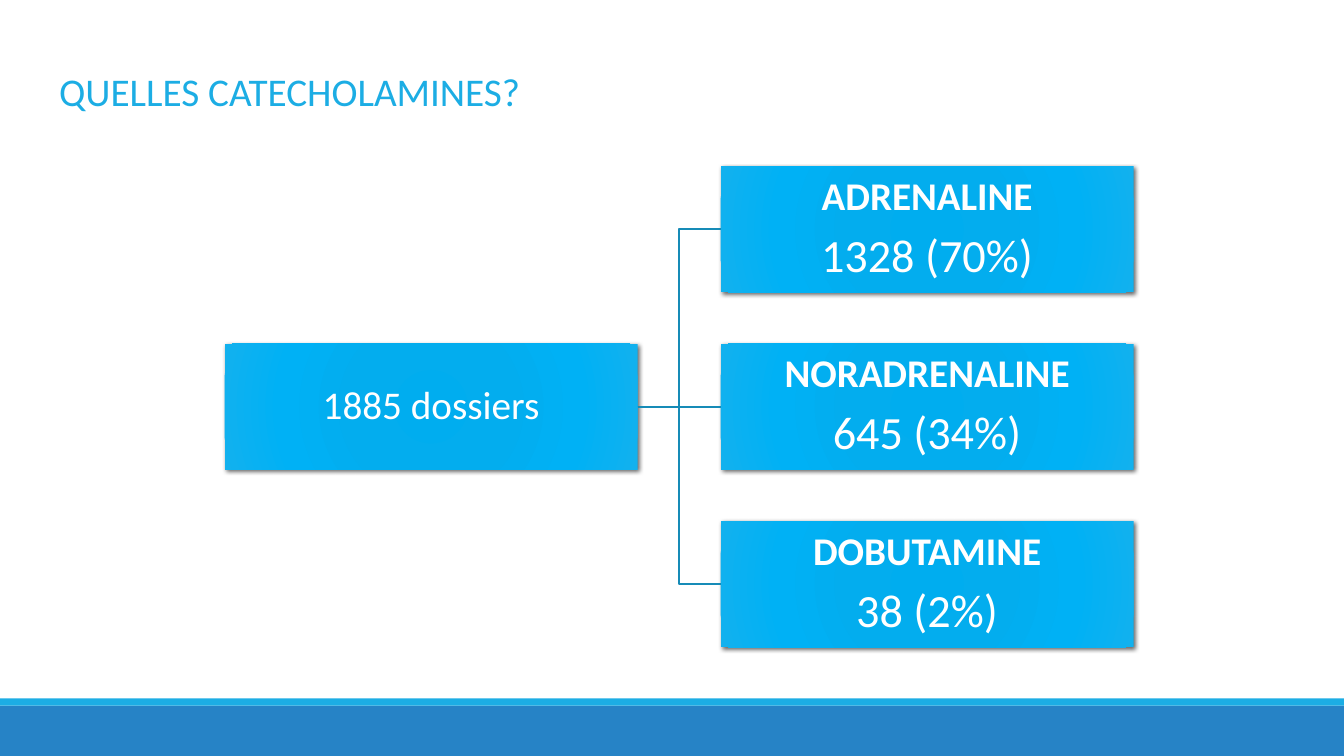
"""Build the slide that splits the patient files by catecholamine."""
from pptx import Presentation
from pptx.dml.color import RGBColor
from pptx.enum.shapes import MSO_CONNECTOR, MSO_SHAPE
from pptx.enum.text import MSO_ANCHOR, PP_ALIGN
from pptx.oxml import parse_xml
from pptx.oxml.ns import nsdecls
from pptx.util import Cm, Pt

TITLE = "QUELLES CATECHOLAMINES?"
TOTAL = "1885 dossiers"
DRUGS = [
    ("ADRENALINE", "1328 (70%)"),
    ("NORADRENALINE", "645 (34%)"),
    ("DOBUTAMINE", "38 (2%)"),
]
BANDS = [(17.78, 1.27, "2683C6"), (17.6, 0.18, "1CADE4")]
GRADIENT = [(0, "00ADEF"), (34, "03ADEE"), (70, "00B1F5"), (100, "12B1EE")]
FONT, TITLE_COLOR, TEXT_COLOR, LINK_COLOR = "Calibri", "1CADE4", "FFFFFF", "168BB7"
SLIDE_WIDTH, SLIDE_HEIGHT = 33.87, 19.05
BOX_WIDTH, BOX_HEIGHT = 10.41, 3.18
TOTAL_LEFT, DRUG_LEFT = 5.66, 18.16
FIRST_TOP, PITCH = 4.19, 4.47


def color(hex_value):
    return RGBColor.from_string(hex_value)


def style(paragraph, size, hex_value, bold=False):
    font = paragraph.font
    font.name, font.size, font.bold = FONT, Pt(size), bold
    font.color.rgb = color(hex_value)


def add_band(slide, top, height, hex_value):
    band = slide.shapes.add_shape(
        MSO_SHAPE.RECTANGLE, 0, Cm(top), Cm(SLIDE_WIDTH), Cm(height))
    band.shadow.inherit = False
    band.fill.solid()
    band.fill.fore_color.rgb = color(hex_value)
    band.line.fill.background()


def add_title(slide):
    title = slide.shapes.add_textbox(Cm(1.24), Cm(1.57), Cm(17.12), Cm(1.45))
    title.text_frame.word_wrap = True
    title.text_frame.text = TITLE
    style(title.text_frame.paragraphs[0], 28, TITLE_COLOR)


def add_gradient_and_shadow(box):
    stops = "".join(
        f'<a:gs pos="{position * 1000}"><a:srgbClr val="{hex_value}"/></a:gs>'
        for position, hex_value in GRADIENT)
    properties = box._element.spPr
    properties.insert(2, parse_xml(
        f'<a:gradFill {nsdecls("a")} rotWithShape="1"><a:gsLst>{stops}</a:gsLst>'
        '<a:path path="circle"><a:fillToRect l="100000" t="100000" '
        'r="100000" b="100000"/></a:path></a:gradFill>'))
    box.shadow.inherit = False
    properties.find("{*}effectLst").append(parse_xml(
        f'<a:outerShdw {nsdecls("a")} blurRad="38100" dist="25400" dir="2700000" '
        'rotWithShape="0"><a:srgbClr val="000000"><a:alpha val="60000"/>'
        '</a:srgbClr></a:outerShdw>'))


def add_box(slide, left, top, lines):
    box = slide.shapes.add_shape(
        MSO_SHAPE.RECTANGLE, Cm(left), Cm(top), Cm(BOX_WIDTH), Cm(BOX_HEIGHT))
    box.line.fill.background()
    add_gradient_and_shadow(box)
    frame = box.text_frame
    frame.word_wrap = True
    frame.vertical_anchor = MSO_ANCHOR.MIDDLE
    frame.margin_left = frame.margin_right = Cm(0.05)
    frame.margin_top = frame.margin_bottom = Cm(0.05)
    frame.text = "\n".join(text for text, size, bold in lines)
    for paragraph, (text, size, bold) in zip(frame.paragraphs, lines):
        paragraph.alignment = PP_ALIGN.CENTER
        paragraph.line_spacing = 0.9
        paragraph.space_after = Pt(size * 0.35)
        style(paragraph, size, TEXT_COLOR, bold)
    return box


def link(slide, total, drug):
    level = total.top == drug.top
    kind = MSO_CONNECTOR.STRAIGHT if level else MSO_CONNECTOR.ELBOW
    connector = slide.shapes.add_connector(kind, 0, 0, 0, 0)
    connector.begin_connect(total, 3)
    connector.end_connect(drug, 1)
    connector.line.color.rgb = color(LINK_COLOR)
    connector.line.width = Pt(1.25)
    connector._element.spPr.append(parse_xml(f'<a:effectLst {nsdecls("a")}/>'))


def main():
    deck = Presentation()
    deck.slide_width, deck.slide_height = Cm(SLIDE_WIDTH), Cm(SLIDE_HEIGHT)
    slide = deck.slides.add_slide(deck.slide_layouts[6])
    for band in BANDS:
        add_band(slide, *band)
    add_title(slide)
    middle_top = FIRST_TOP + PITCH * (len(DRUGS) - 1) / 2
    total = add_box(slide, TOTAL_LEFT, middle_top, [(TOTAL, 28, False)])
    for row, (drug, count) in enumerate(DRUGS):
        drug_box = add_box(slide, DRUG_LEFT, FIRST_TOP + PITCH * row,
                           [(drug, 28, True), (count, 33, False)])
        link(slide, total, drug_box)
    deck.save("out.pptx")


if __name__ == "__main__":
    main()
